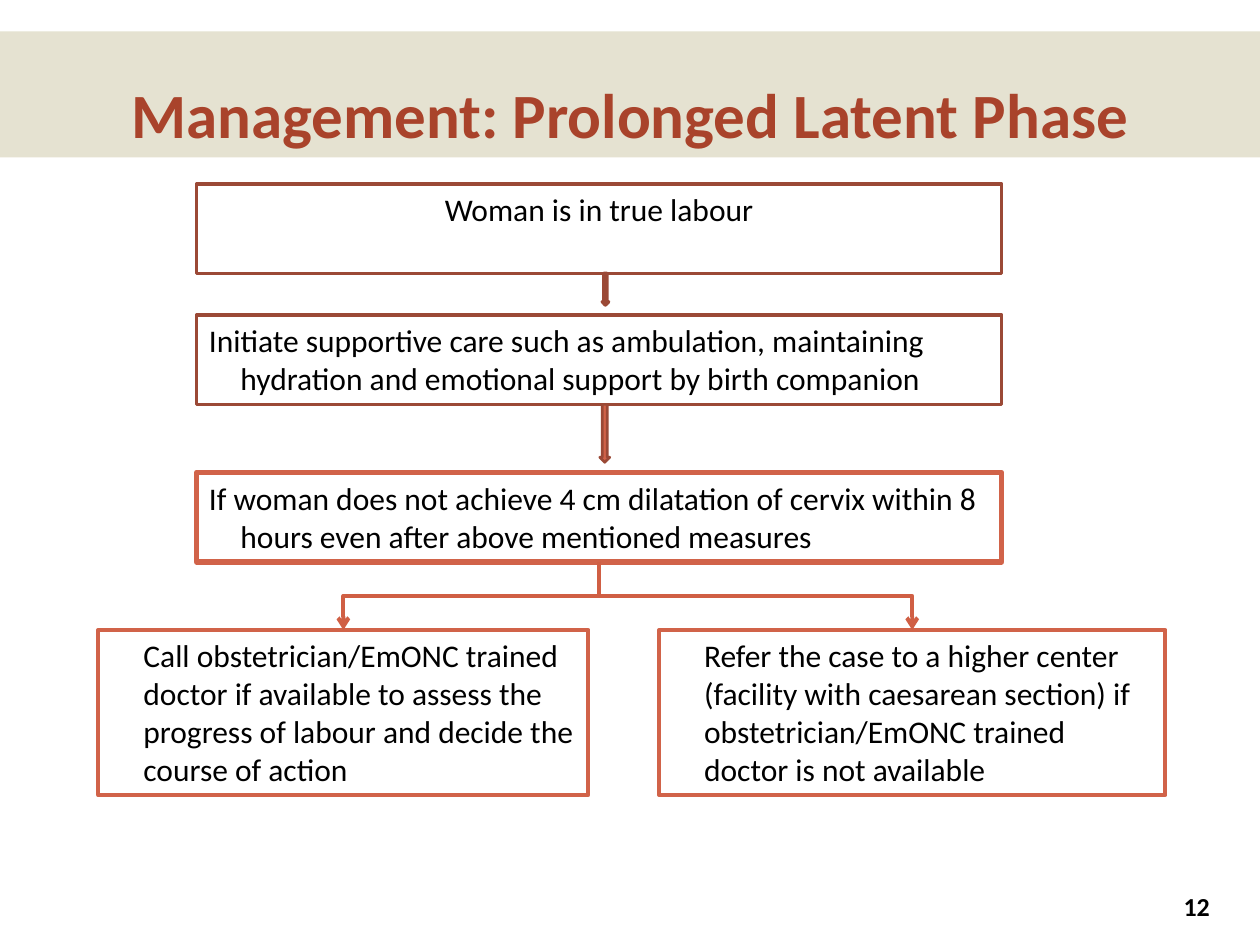
"""Build the flowchart slide on managing a prolonged latent phase."""
import pptx
import pptx.util
import pptx.dml.color
import pptx.enum.shapes
import pptx.enum.text
import pptx.oxml
import pptx.oxml.ns
from lxml import etree

Inches = pptx.util.Inches
Pt = pptx.util.Pt
ALIGN = pptx.enum.text.PP_ALIGN
ANCHOR = pptx.enum.text.MSO_ANCHOR
SHAPE = pptx.enum.shapes.MSO_SHAPE
qn = pptx.oxml.ns.qn

BRICK, CORAL, BRANCH = "9B4936", "D16349", "D05F44"
HEADING = "Management: Prolonged Latent Phase"
PAGE_NUMBER = "12"
STEP_LEFT, STEP_WIDTH, STEP_HEIGHT = 1.56, 6.39, 0.71
OPTION_TOP, OPTION_HEIGHT = 5, 1.31
STEPS = [
    dict(top=1.46, text="Woman is in true labour", line=(BRICK, 2), align=ALIGN.CENTER, indent=(0, 0)),
    dict(top=2.5, text="Initiate supportive care such as ambulation, maintaining hydration "
         "and emotional support by birth companion", line=(BRICK, 2), align=ALIGN.LEFT, indent=(0.25, -0.25)),
    dict(top=3.75, text="If woman does not achieve 4 cm dilatation of cervix within 8 hours "
         "even after above mentioned measures", line=(CORAL, 3), align=ALIGN.LEFT, indent=(0.25, -0.25)),
]
OPTIONS = [
    dict(left=0.78, width=3.89, turn=90, text="Call obstetrician/EmONC trained doctor if available "
         "to assess the progress of labour and decide the course of action"),
    dict(left=5.23, width=4.02, turn=270, text="Refer the case to a higher center (facility with "
         "caesarean section) if obstetrician/EmONC trained doctor is not available"),
]
ARROWS = [((4.78, 2.17, 0.05, 0.25), 2), ((4.76, 3.21, 0.08, 0.46), 1.5)]


def colour(value):
    return pptx.dml.color.RGBColor.from_string(value)


def set_line(line, value, width):
    line.color.rgb = colour(value)
    line.width = Pt(width)


def write(frame, text, align, anchor, size=18, bold=False, ink="000000", indent=(0, 0)):
    frame.text = text
    frame.word_wrap = True
    frame.vertical_anchor = anchor
    paragraph = frame.paragraphs[0]
    paragraph.alignment = align
    properties = paragraph._p.get_or_add_pPr()
    for key, value in zip(("marL", "indent"), indent):
        properties.set(key, str(Inches(value)))
    formats = {"name": "Calibri", "size": Pt(size), "bold": bold}
    for key, value in formats.items():
        setattr(paragraph.font, key, value)
    paragraph.font.color.rgb = colour(ink)


def add_block(slide, kind, place, fill=None, line=None):
    block = slide.shapes.add_shape(kind, *map(Inches, place))
    block.shadow.inherit = False
    if fill:
        block.fill.solid()
        block.fill.fore_color.rgb = colour(fill)
    else:
        block.fill.background()
    if line:
        set_line(block.line, *line)
    else:
        block.line.fill.background()
    return block


def add_branch(slide, start, end, turn):
    """Draw an elbow that leaves downwards, as a turned horizontal elbow."""
    (x1, y1), (x2, y2) = start, end
    middle_x, middle_y = (x1 + x2) / 2, (y1 + y2) / 2
    half_drop, half_span = (y2 - y1) / 2, abs(x2 - x1) / 2
    side = 1 if turn == 90 else -1
    branch = slide.shapes.add_connector(
        pptx.enum.shapes.MSO_CONNECTOR.ELBOW,
        Inches(middle_x - side * half_drop), Inches(middle_y - half_span),
        Inches(middle_x + side * half_drop), Inches(middle_y + half_span))
    set_line(branch.line, BRANCH, 2.25)
    properties = branch._element.spPr
    properties.find(qn("a:xfrm")).set("rot", str(turn * 60000))
    etree.SubElement(properties.find(qn("a:ln")), qn("a:tailEnd"), type="arrow")
    etree.SubElement(properties, qn("a:effectLst"))


def main():
    deck = pptx.Presentation()
    deck.slide_width, deck.slide_height = Inches(10), Inches(7.5)
    slide = deck.slides.add_slide(deck.slide_layouts[5])

    band = add_block(slide, SHAPE.RECTANGLE, (0, 0.25, 10, 1), fill="DDD9C3")
    band_colour = band._element.spPr.find(qn("a:solidFill"))[0]
    etree.SubElement(band_colour, qn("a:alpha"), val="76000")
    slide.shapes._spTree.insert(2, band._element)

    title = slide.shapes.title
    places = {"left": 0.3, "top": 0.25, "width": 9.4, "height": 1}
    for key, value in places.items():
        setattr(title, key, Inches(value))
    write(title.text_frame, HEADING, ALIGN.CENTER, ANCHOR.BOTTOM, 36, True, "A9432B")

    for step in STEPS:
        box = add_block(slide, SHAPE.RECTANGLE, (STEP_LEFT, step["top"], STEP_WIDTH, STEP_HEIGHT),
                        line=step["line"])
        write(box.text_frame, step["text"], step["align"], ANCHOR.TOP, indent=step["indent"])

    for place, width in ARROWS:
        add_block(slide, SHAPE.DOWN_ARROW, place, CORAL, (BRICK, width))

    fork = (STEP_LEFT + STEP_WIDTH / 2, STEPS[-1]["top"] + STEP_HEIGHT)
    for option in OPTIONS:
        box = add_block(slide, SHAPE.RECTANGLE,
                        (option["left"], OPTION_TOP, option["width"], OPTION_HEIGHT), line=(CORAL, 2.25))
        write(box.text_frame, option["text"], ALIGN.LEFT, ANCHOR.TOP, indent=(0.26, 0))
        add_branch(slide, fork, (option["left"] + option["width"] / 2, OPTION_TOP), option["turn"])

    number = slide.shapes.add_textbox(*map(Inches, (8.74, 7.03, 0.96, 0.32)))
    write(number.text_frame, PAGE_NUMBER, ALIGN.RIGHT, ANCHOR.MIDDLE, 14.8, True)
    deck.save("out.pptx")


if __name__ == "__main__":
    main()
